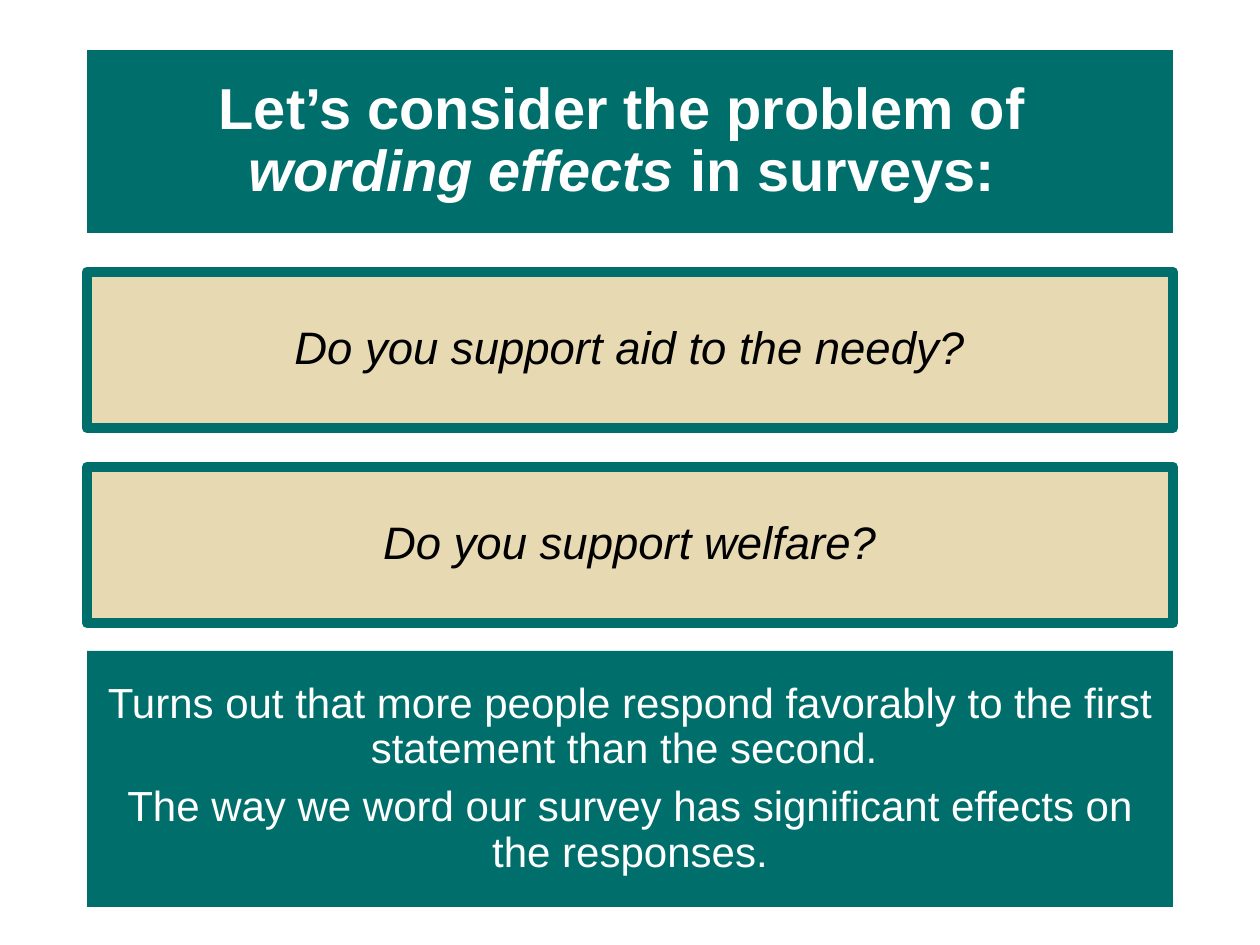
import dataclasses

import lxml.etree
import pptx
import pptx.dml.color
import pptx.enum.shapes
import pptx.enum.text
import pptx.oxml.ns
import pptx.util

PX = 914400 / 126


@dataclasses.dataclass(frozen=True)
class Theme:
    font: str = "Arial"
    teal: str = "006F6C"
    sand: str = "E7D9B1"
    white: str = "FFFFFF"
    black: str = "000000"
    title_size: int = 33
    question_size: int = 26
    finding_size: int = 24
    border: int = 6
    line_spacing: float = 0.9
    space_before: float = 7.5


def px(n):
    return pptx.util.Emu(round(n * PX))


def rgb(value):
    return pptx.dml.color.RGBColor.from_string(value)


def apply(obj, values):
    for name, value in values.items():
        setattr(obj, name, value)


class Deck:
    def __init__(self, theme):
        self.theme = theme
        self.prs = pptx.Presentation()
        apply(self.prs, {"slide_width": px(1260), "slide_height": px(945)})

    def new_slide(self, layout):
        self.s = self.prs.slides.add_slide(self.prs.slide_layouts[layout])

    def placeholder(self, idx):
        sp = next(ph for ph in self.s.placeholders if ph.placeholder_format.idx == idx)
        self.s.shapes.element.append(sp.element)
        return sp

    def rectangle(self):
        sp = self.s.shapes.add_shape(
            pptx.enum.shapes.MSO_SHAPE.RECTANGLE, 0, 0, px(1), px(1))
        sp.shadow.inherit = False
        return sp

    def panel(self, sp, top, height, fill, border=None):
        apply(sp, {"left": px(87), "top": px(top), "width": px(1086), "height": px(height)})
        sp.fill.solid()
        sp.fill.fore_color.rgb = rgb(fill)
        if border:
            sp.line.color.rgb = rgb(border)
            sp.line.width = pptx.util.Pt(self.theme.border)
        else:
            sp.line.fill.background()

    def text(self, sp, paragraphs, size, color, bold=False):
        tf = sp.text_frame
        apply(tf, {"word_wrap": True,
                   "auto_size": pptx.enum.text.MSO_AUTO_SIZE.NONE,
                   "vertical_anchor": pptx.enum.text.MSO_ANCHOR.MIDDLE})
        for i, lines in enumerate(paragraphs):
            p = tf.add_paragraph() if i else tf.paragraphs[0]
            pPr = p._p.get_or_add_pPr()
            pPr.set("marL", "0")
            pPr.set("indent", "0")
            lxml.etree.SubElement(pPr, pptx.oxml.ns.qn("a:buNone"))
            apply(p, {"alignment": pptx.enum.text.PP_ALIGN.CENTER,
                      "line_spacing": self.theme.line_spacing,
                      "space_before": pptx.util.Pt(self.theme.space_before if i else 0)})
            for j, runs in enumerate(lines):
                if j:
                    p.add_line_break()
                for words, italic in runs:
                    r = p.add_run()
                    r.text = words
                    apply(r.font, {"name": self.theme.font, "size": pptx.util.Pt(size),
                                   "bold": bold, "italic": italic})
                    r.font.color.rgb = rgb(color)

    def title(self, lines, top, height):
        sp = self.placeholder(0)
        self.panel(sp, top, height, self.theme.teal)
        self.text(sp, [lines], self.theme.title_size, self.theme.white, bold=True)

    def question(self, sp, words, top, height):
        self.panel(sp, top, height, self.theme.sand, self.theme.teal)
        self.text(sp, [[[(words, True)]]], self.theme.question_size, self.theme.black)

    def findings(self, sp, sentences, top, height):
        self.panel(sp, top, height, self.theme.teal)
        self.text(sp, [[[(words, False)]] for words in sentences],
                  self.theme.finding_size, self.theme.white)


def main():
    deck = Deck(Theme())
    deck.new_slide(3)
    deck.title([[("Let’s consider the problem of ", False)],
                [("wording effects ", True), ("in surveys: ", False)]], 50, 183)
    deck.question(deck.placeholder(1), "Do you support aid to the needy?", 272, 156)
    deck.question(deck.rectangle(), "Do you support welfare?", 467, 156)
    deck.findings(deck.placeholder(2), [
        "Turns out that more people respond favorably to the first statement than the second. ",
        "The way we word our survey has significant effects on the responses.",
    ], 651, 256)
    deck.prs.save("out.pptx")


if __name__ == "__main__":
    main()
